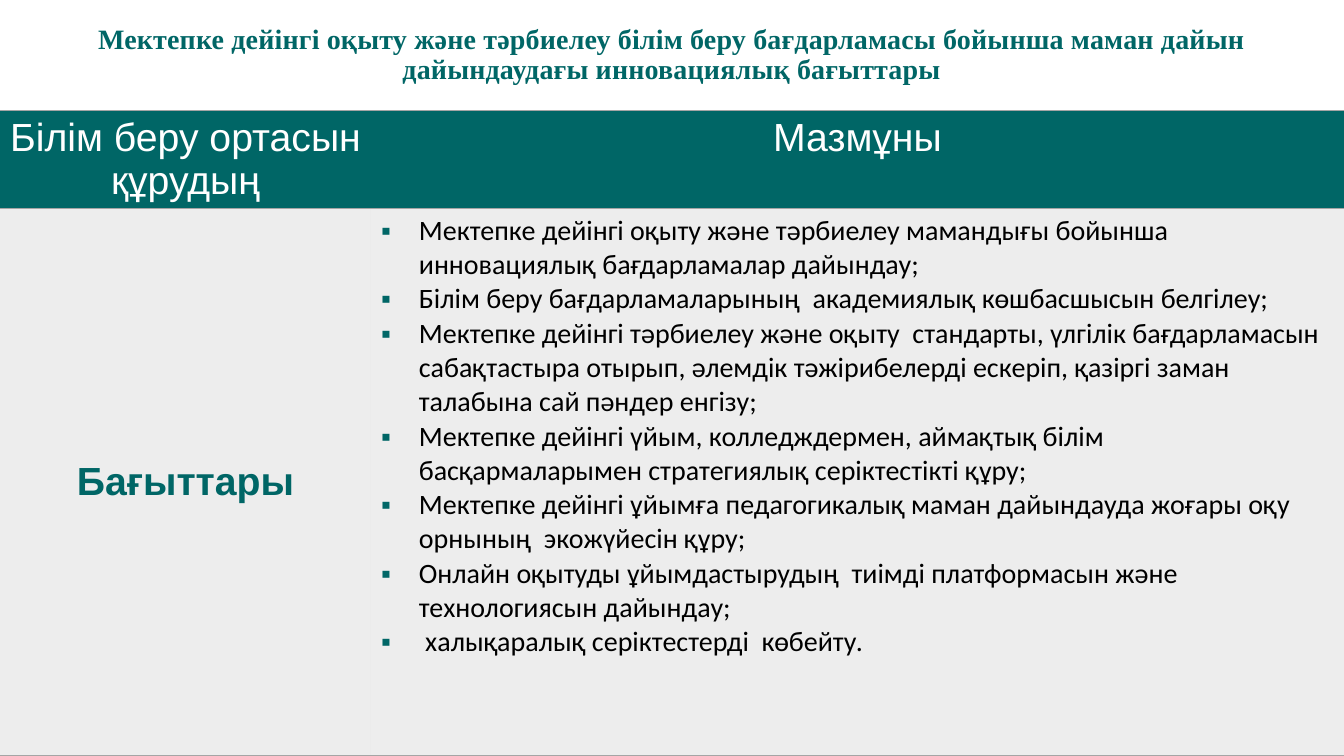
from lxml.etree import SubElement
from pptx import Presentation
from pptx.dml.color import RGBColor
from pptx.enum.text import MSO_ANCHOR, MSO_AUTO_SIZE, PP_ALIGN
from pptx.oxml.ns import qn
from pptx.util import Pt

TEAL = RGBColor(0x00, 0x66, 0x66)
WHITE = RGBColor(0xFF, 0xFF, 0xFF)
BLACK = RGBColor(0x00, 0x00, 0x00)
GREY = RGBColor(0xA5, 0xA5, 0xA5)
PLAIN_TABLE_STYLE = "{2D5ABB26-0587-4C30-8999-92F81FD0307C}"

TITLE = (
    "Мектепке дейінгі оқыту және тәрбиелеу білім беру бағдарламасы "
    "бойынша маман дайын дайындаудағы инновациялық бағыттары"
)
HEADINGS = ["Білім беру ортасын құрудың", "Мазмұны"]
ROW_LABEL = "Бағыттары"
DIRECTIONS = [
    "Мектепке дейінгі оқыту және тәрбиелеу мамандығы бойынша инновациялық "
    "бағдарламалар дайындау;",
    "Білім беру бағдарламаларының  академиялық көшбасшысын белгілеу;",
    "Мектепке дейінгі тәрбиелеу және оқыту  стандарты, үлгілік бағдарламасын "
    "сабақтастыра отырып, әлемдік тәжірибелерді ескеріп, қазіргі заман "
    "талабына сай пәндер енгізу;",
    "Мектепке дейінгі үйым, колледждермен, аймақтық білім басқармаларымен "
    "стратегиялық серіктестікті құру;",
    "Мектепке дейінгі ұйымға педагогикалық маман дайындауда жоғары оқу "
    "орнының  экожүйесін құру;",
    "Онлайн оқытуды ұйымдастырудың  тиімді платформасын және технологиясын "
    "дайындау;",
    " халықаралық серіктестерді  көбейту.",
]


def set_font(paragraph, name, size, color, bold=False):
    font = paragraph.font
    font.name = name
    font.size = Pt(size)
    font.bold = bold
    font.color.rgb = color


def fill_title(title):
    title.left, title.top = Pt(25), Pt(0)
    title.width, title.height = Pt(909.5), Pt(79)
    frame = title.text_frame
    frame.text = TITLE
    frame.word_wrap = True
    frame.auto_size = MSO_AUTO_SIZE.NONE
    frame.vertical_anchor = MSO_ANCHOR.MIDDLE
    paragraph = frame.paragraphs[0]
    paragraph.alignment = PP_ALIGN.CENTER
    paragraph.line_spacing = 0.9
    set_font(paragraph, "Times New Roman", 20, TEAL, bold=True)
    paragraph.runs[0].font._element.set("spc", "10")


def add_plain_table(page):
    frame = page.shapes.add_table(2, 2, Pt(0), Pt(79), Pt(960), Pt(461))
    next(frame.element.iter(qn("a:tableStyleId"))).text = PLAIN_TABLE_STYLE
    table = frame.table
    for column, width in zip(table.columns, (265, 695)):
        column.width = Pt(width)
    for row, height in zip(table.rows, (70, 391)):
        row.height = Pt(height)
    return table


def paint_cell(cell, color, opacity=None):
    properties = cell._tc.get_or_add_tcPr()
    for side in ("a:lnT", "a:lnB"):
        line = SubElement(properties, qn(side), w=str(Pt(1)))
        solid = SubElement(line, qn("a:solidFill"))
        SubElement(solid, qn("a:srgbClr"), val=str(GREY))
    cell.fill.solid()
    cell.fill.fore_color.rgb = color
    if opacity is not None:
        shade = properties.find(qn("a:solidFill")).find(qn("a:srgbClr"))
        SubElement(shade, qn("a:alpha"), val=str(opacity * 1000))


def write_centred(cell, text, color, bold=False):
    cell.text = text
    paragraph = cell.text_frame.paragraphs[0]
    paragraph.alignment = PP_ALIGN.CENTER
    set_font(paragraph, "Arial", 28, color, bold)


def add_bullet(paragraph):
    properties = paragraph._p.get_or_add_pPr()
    properties.set("marL", str(Pt(27)))
    properties.set("indent", str(-Pt(27)))
    color = SubElement(properties, qn("a:buClr"))
    SubElement(color, qn("a:srgbClr"), val=str(TEAL))
    SubElement(properties, qn("a:buFont"), typeface="Arial")
    SubElement(properties, qn("a:buChar"), char="▪")


def write_list(cell, items):
    frame = cell.text_frame
    frame.text = "\n".join(items)
    for paragraph in frame.paragraphs:
        add_bullet(paragraph)
        set_font(paragraph, "Calibri", 20, BLACK)


def main():
    deck = Presentation()
    deck.slide_width, deck.slide_height = Pt(960), Pt(540)
    page = deck.slides.add_slide(deck.slide_layouts[5])
    fill_title(page.shapes.title)

    table = add_plain_table(page)
    for column, heading in enumerate(HEADINGS):
        paint_cell(table.cell(0, column), TEAL)
        write_centred(table.cell(0, column), heading, WHITE)
        paint_cell(table.cell(1, column), GREY, opacity=20)

    label = table.cell(1, 0)
    write_centred(label, ROW_LABEL, TEAL, bold=True)
    label.vertical_anchor = MSO_ANCHOR.MIDDLE
    write_list(table.cell(1, 1), DIRECTIONS)
    deck.save("out.pptx")


if __name__ == "__main__":
    main()
